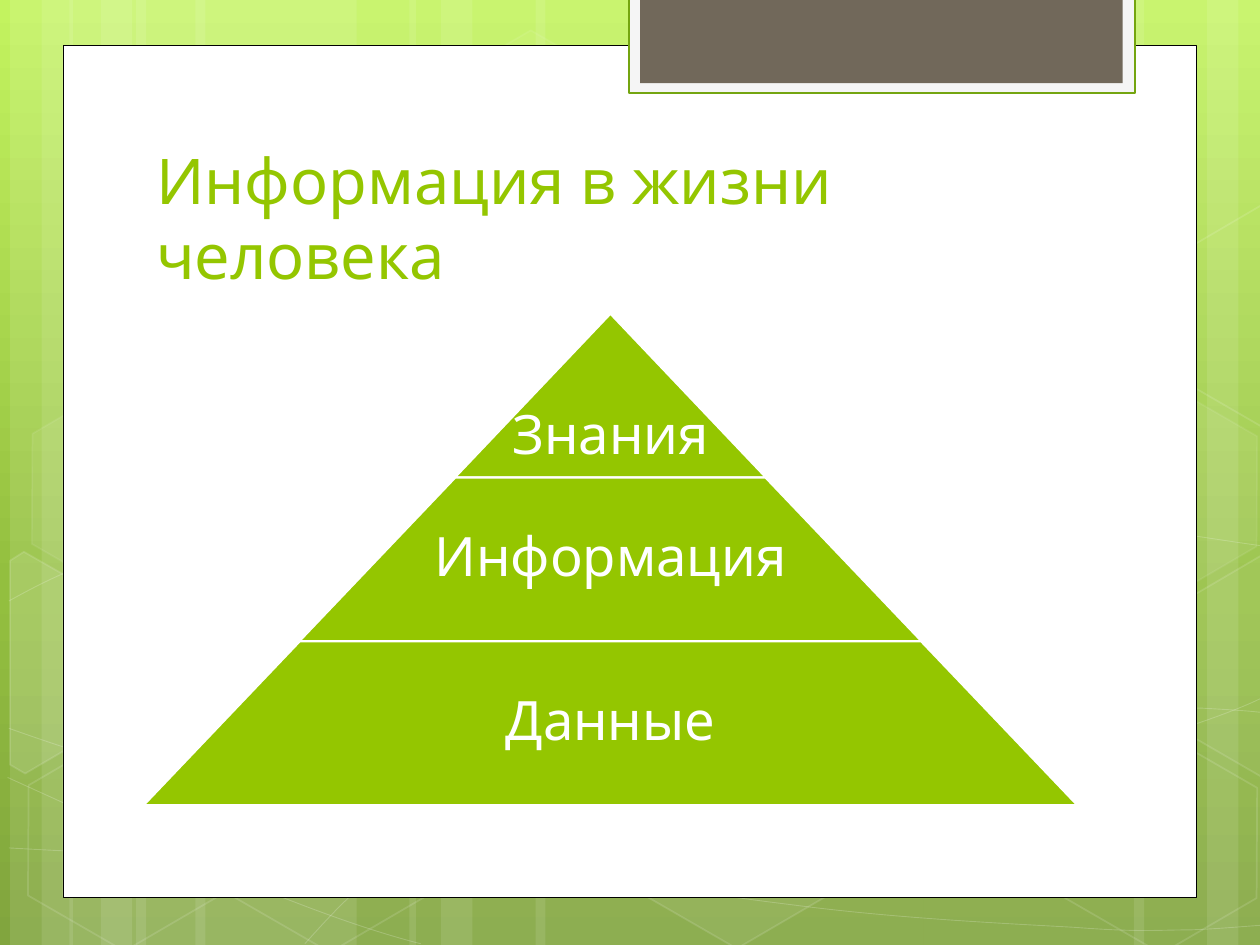
"""Build the slide with the pyramid of data, information and knowledge."""
from copy import deepcopy
from dataclasses import dataclass

from lxml.etree import SubElement
from pptx import Presentation
from pptx.dml.color import RGBColor as Rgb
from pptx.enum.shapes import MSO_SHAPE as Preset
from pptx.enum.text import MSO_ANCHOR as Anchor, PP_ALIGN as Align
from pptx.oxml.ns import qn
from pptx.util import Cm, Pt

CM_PER_INCH = 2.54


@dataclass(frozen=True)
class Theme:
    """Colours, font and sizes of the slide."""
    white: str = "FFFFFF"
    black: str = "000000"
    green: str = "94C600"
    tab_back: str = "F5F5F5"
    tab_line: str = "74A510"
    tab_front: str = "71685A"
    backdrop: tuple = ((0, "C3F35F"), (0.62, "93BF3F"), (1, "81A53E"))
    font: str = "League Spartan"
    title_size: float = 36
    level_size: float = 31


def lengths(*inches):
    """Turn distances in inches into Cm lengths."""
    return [Cm(inch * CM_PER_INCH) for inch in inches]


def assign(target, values):
    """Set every attribute named in the values."""
    for name, value in values.items():
        setattr(target, name, value)


class SlidePainter:
    """Draws the elements of one slide in one theme."""

    def __init__(self, slide, theme):
        """Keep the slide and the theme."""
        self.slide = slide
        self.theme = theme

    def backdrop(self):
        """Fill the background with the vertical gradient."""
        fill = self.slide.background.fill
        fill.gradient()
        fill.gradient_angle = 270
        stop_list = self.slide.element.find(".//" + qn("a:gsLst"))
        stop_list.insert(1, deepcopy(stop_list[0]))
        for stop, (position, color) in zip(fill.gradient_stops, self.theme.backdrop):
            stop.position = position
            stop.color.rgb = Rgb.from_string(color)

    def finish(self, shape, fill=None, fill_alpha=100, line=None, width=1, line_alpha=100):
        """Give a shape its fill, line and transparency."""
        shape.shadow.inherit = False
        for paint, color in ((shape.fill, fill), (shape.line.fill, line)):
            if color:
                paint.solid()
                paint.fore_color.rgb = Rgb.from_string(color)
            else:
                paint.background()
        if line:
            shape.line.width = Pt(width)
        for tags, alpha in ((("a:solidFill",), fill_alpha),
                            (("a:ln", "a:solidFill"), line_alpha)):
            node = shape.element.spPr.find("/".join(map(qn, (*tags, "a:srgbClr"))))
            if node is not None and alpha < 100:
                SubElement(node, qn("a:alpha"), val=str(alpha * 1000))
        return shape

    def preset(self, kind, box, adjust=None, rotation=0, **look):
        """Draw a preset shape."""
        shape = self.slide.shapes.add_shape(kind, *lengths(*box))
        shape.rotation = rotation
        if adjust:
            shape.adjustments[0] = adjust
        return self.finish(shape, **look)

    def outline(self, points, close=False, **look):
        """Draw a freeform through the points."""
        start, *rest = [lengths(*point) for point in points]
        builder = self.slide.shapes.build_freeform(*start, scale=1.0)
        builder.add_line_segments(rest, close=close)
        return self.finish(builder.convert_to_shape(), **look)

    def curve(self, nodes):
        """Draw a faint chain of cubic curves, straight where a node is tripled."""
        shape = self.outline(nodes, line=self.theme.white, width=0.5, line_alpha=20)
        route = shape.element.find(".//" + qn("a:path"))
        sides = route.findall(qn("a:lnTo"))
        for index in range(0, len(sides), 3):
            segment = sides[index:index + 3]
            straight = len(set(nodes[index + 1:index + 4])) == 1
            joined = SubElement(route, qn("a:lnTo" if straight else "a:cubicBezTo"))
            for side in segment:
                route.remove(side)
            joined.extend([side[0] for side in segment[:1 if straight else 3]])

    def hexagon(self, left, top, fill_alpha, line_alpha):
        """Draw a faint turned hexagon."""
        white = self.theme.white
        self.preset(Preset.HEXAGON, (left, top, 1.75, 1.52), 0.285, 30,
                    fill=white if fill_alpha else None, fill_alpha=fill_alpha,
                    line=white, line_alpha=line_alpha)

    def text(self, words, box, size, color, frame_values, para_values):
        """Write one paragraph in a text box."""
        frame = self.slide.shapes.add_textbox(*lengths(*box)).text_frame
        assign(frame, {"word_wrap": True, **frame_values})
        para = frame.paragraphs[0]
        assign(para, para_values)
        span = para.add_run()
        span.text = words
        assign(span.font, {"name": self.theme.font, "size": Pt(size)})
        span.font.color.rgb = Rgb.from_string(color)


STRIPES = ((1.08, 1.75), (0.08, 0.5), (0.33, 0.83), (1.55, 1.75), (0.55, 0.5), (0.8, 0.83),
           (7.33, 1.75), (9.58, 0.5), (9, 0.83), (4.25, 3.08), (3.25, 0.5), (3.5, 0.83))
CURVES = (
    ((0.07, 6.73), (0.61, 6.76), (1.15, 6.79), (1.9, 6.78), (2.65, 6.77), (3.58, 6.75),
     (4.58, 6.65), (5.58, 6.55), (7, 6.36), (7.92, 6.17), (8.83, 5.98), (9.77, 5.68),
     (10.07, 5.51)),
    ((0.07, 4.77), (0.36, 4.61), (0.65, 4.46), (1.21, 4.31), (1.78, 4.16), (2.59, 3.94),
     (3.47, 3.87), (4.36, 3.8), (5.44, 3.79), (6.54, 3.87), (7.64, 3.95), (9.47, 4.26),
     (10.07, 4.34)),
    ((0.06, 6.17), (1.27, 6.72), (2.47, 7.27), (3.34, 7.49)),
    ((0.07, 5.78), (0.38, 5.89), (0.7, 6), (1.28, 6.16), (1.86, 6.31), (2.73, 6.56),
     (3.57, 6.73), (4.4, 6.9), (5.45, 7.08), (6.28, 7.18), (7.11, 7.29), (8, 7.33),
     (8.53, 7.36), (9.05, 7.4), (9.19, 7.38), (9.45, 7.38), (9.71, 7.37), (9.89, 7.35),
     (10.07, 7.34)),
    ((2.42, 7.49), (2.6, 7.29), (2.78, 7.09), (3.02, 6.91), (3.26, 6.73), (3.6, 6.53),
     (3.88, 6.39), (4.16, 6.25), (4.33, 6.19), (4.7, 6.09), (5.06, 5.99), (5.73, 5.85),
     (6.08, 5.78), (6.44, 5.71), (6.49, 5.71), (6.8, 5.69), (7.11, 5.66), (7.6, 5.63),
     (7.94, 5.62), (8.29, 5.61), (8.86, 5.62), (8.86, 5.62), (9.53, 5.62), (9.53, 5.62),
     (9.53, 5.62), (9.71, 5.63), (9.88, 5.64), (9.97, 5.65), (10.06, 5.66), (10.03, 5.65),
     (10.06, 5.66)),
)
HEXAGONS = ((3.34, 0.36, 4, 8), (4.97, 5.89, 6, 12), (0.11, 5.91, 0, 12),
            (0.14, 3.12, 7, 8), (1.74, 5.92, 0, 12), (7.53, 4.53, 10, 12),
            (8.34, 5.93, 0, 12), (8.34, 3.14, 7, 8))
CUT_HEXAGONS = (
    (((0.08, 4.45), (0.19, 4.38), (0.96, 4.82), (0.95, 5.7), (0.2, 6.14), (0.08, 6.07)), 10),
    (((9.26, 4.85), (10.01, 4.41), (10.09, 4.46), (10.09, 6.13), (10.02, 6.17),
      (9.26, 5.73)), 4),
    (((9.26, 2.07), (10.01, 1.63), (10.1, 1.68), (10.09, 3.35), (10.02, 3.39),
      (9.26, 2.95)), 0),
)
LEVELS = (("Знания", 2.47, 0.7), ("Информация", 3.21, 0.04), ("Данные", 4.82, 0.04))


def draw_pyramid(painter, left=1.14, top=2.49, height=1.3, step=2.47):
    """Stack the levels, each one step wider than the one above."""
    theme = painter.theme
    center = left + len(LEVELS) * step / 2
    for index, (words, text_width, top_inset) in enumerate(LEVELS):
        width = step * (index + 1)
        level_top = top + index * height
        painter.preset(Preset.TRAPEZOID, (center - width / 2, level_top, width, height), 0.953,
                       fill=theme.green, line=theme.white, width=1.25)
        margins = dict(zip(("margin_left", "margin_right", "margin_bottom", "margin_top"),
                           lengths(0.04, 0.04, 0.04, top_inset)))
        painter.text(words, (center - text_width / 2, level_top, text_width, height),
                     theme.level_size, theme.white,
                     {"vertical_anchor": Anchor.MIDDLE, **margins},
                     {"alignment": Align.CENTER, "line_spacing": 0.9})


def main():
    """Draw the slide and save the deck."""
    theme = Theme()
    deck = Presentation()
    deck.slide_width, deck.slide_height = lengths(10, 7.5)
    painter = SlidePainter(deck.slides.add_slide(deck.slide_layouts[6]), theme)
    painter.backdrop()
    for left, width in STRIPES:
        painter.preset(Preset.RECTANGLE, (left, 0, width, 7.5), fill=theme.white, fill_alpha=10)
    for nodes in CURVES:
        painter.curve(nodes)
    for hexagon in HEXAGONS:
        painter.hexagon(*hexagon)
    for points, alpha in CUT_HEXAGONS:
        painter.outline(points, close=True, fill=theme.white if alpha else None,
                        fill_alpha=alpha, line=theme.white, line_alpha=12)
    for box, look in (
            ((0.5, 0.36, 9, 6.76), {"fill": theme.white, "line": theme.black, "width": 0.5}),
            ((4.99, -0.02, 4.02, 0.76),
             {"fill": theme.tab_back, "line": theme.tab_line, "width": 1.25}),
            ((5.08, -0.02, 3.83, 0.68), {"fill": theme.tab_front})):
        painter.preset(Preset.RECTANGLE, box, **look)
    painter.text("Информация в жизни человека", (1.14, 1.12, 7.68, 1.25), theme.title_size,
                 theme.green, {"vertical_anchor": Anchor.BOTTOM}, {"alignment": Align.LEFT})
    draw_pyramid(painter)
    deck.save("out.pptx")


if __name__ == "__main__":
    main()
